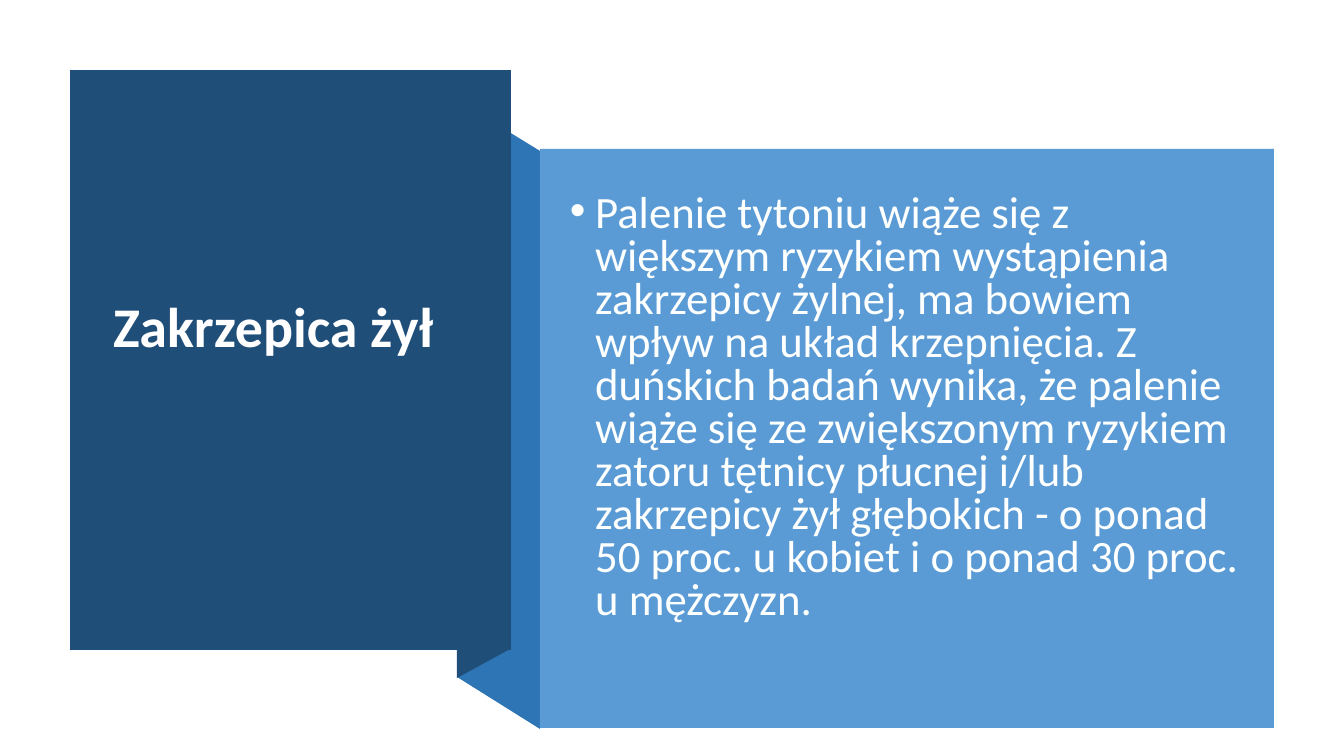
from lxml.etree import SubElement
from pptx import Presentation
from pptx.dml.color import RGBColor
from pptx.enum.shapes import MSO_SHAPE
from pptx.enum.text import MSO_ANCHOR, MSO_AUTO_SIZE, PP_ALIGN
from pptx.oxml.ns import qn
from pptx.util import Pt

PX = 914400 / 100.8  # EMU in one px
NAVY, BLUE, SKY = "1F4E79", "2E75B6", "5B9BD5"

RISK_TEXT = (
    "Palenie tytoniu wiąże się z większym ryzykiem wystąpienia zakrzepicy "
    "żylnej, ma bowiem wpływ na układ krzepnięcia. Z duńskich badań wynika, "
    "że palenie wiąże się ze zwiększonym ryzykiem zatoru tętnicy płucnej "
    "i/lub zakrzepicy żył głębokich - o ponad 50 proc. u kobiet "
    "i o ponad 30 proc. u mężczyzn."
)


def px(length):
    return round(length * PX)


def color(hex_code):
    return RGBColor.from_string(hex_code)


def paint(panel, fill):
    panel.shadow.inherit = False
    panel.fill.solid()
    panel.fill.fore_color.rgb = color(fill)
    panel.line.fill.background()


def add_fold(slide, corners, fill):
    outline = slide.shapes.build_freeform(*corners[0], scale=PX)
    outline.add_line_segments(corners[1:], close=True)
    paint(outline.convert_to_shape(), fill)


def add_panel(slide, left, top, width, height, fill):
    panel = slide.shapes.add_shape(
        MSO_SHAPE.RECTANGLE, px(left), px(top), px(width), px(height))
    paint(panel, fill)


def add_run(paragraph, text, size, hex_code, bold=False):
    run = paragraph.add_run()
    run.text = text
    run.font.name = "Calibri"
    run.font.size = Pt(size)
    run.font.bold = bold
    run.font.color.rgb = color(hex_code)


def set_title(slide, text):
    title = slide.shapes.title
    title.left, title.top, title.width, title.height = map(px, (103, 108, 374, 503))
    frame = title.text_frame
    frame.word_wrap = True
    frame.auto_size = MSO_AUTO_SIZE.NONE
    frame.vertical_anchor = MSO_ANCHOR.MIDDLE
    frame.margin_bottom = px(66)  # lifts the title above the middle
    paragraph = frame.paragraphs[0]
    paragraph.alignment = PP_ALIGN.LEFT
    paragraph.line_spacing = 0.9
    add_run(paragraph, text, 40, "FFFFFF", bold=True)
    # Bring the title in front of the panels
    slide.shapes._spTree.append(title._element)


def add_bullet_text(slide, left, top, width, height, text):
    box = slide.shapes.add_textbox(px(left), px(top), px(width), px(height))
    frame = box.text_frame
    frame.word_wrap = True
    frame.vertical_anchor = MSO_ANCHOR.TOP
    paragraph = frame.paragraphs[0]
    paragraph.line_spacing = 0.8
    properties = paragraph._p.get_or_add_pPr()
    properties.set("marL", "228600")
    properties.set("indent", "-228600")
    SubElement(properties, qn("a:buFont"), typeface="Arial")
    SubElement(properties, qn("a:buChar"), char="•")
    add_run(paragraph, text, 32, "FEFFFF")


def main():
    deck = Presentation()
    deck.slide_width, deck.slide_height = px(1344), px(756)
    slide = deck.slides.add_slide(deck.slide_layouts[5])

    # Folded ribbon behind the two panels
    add_fold(slide, [(540, 729), (457, 677), (457, 100), (540, 151)], BLUE)
    add_fold(slide, [(510, 649), (457, 678), (457, 99), (510, 70)], NAVY)

    # Title panel
    add_panel(slide, 70, 70, 441, 580, NAVY)
    set_title(slide, "Zakrzepica żył")

    # Text panel
    add_panel(slide, 540, 149, 734, 579, SKY)
    add_bullet_text(slide, 560, 189, 690, 516, RISK_TEXT)

    deck.save("out.pptx")


if __name__ == "__main__":
    main()
